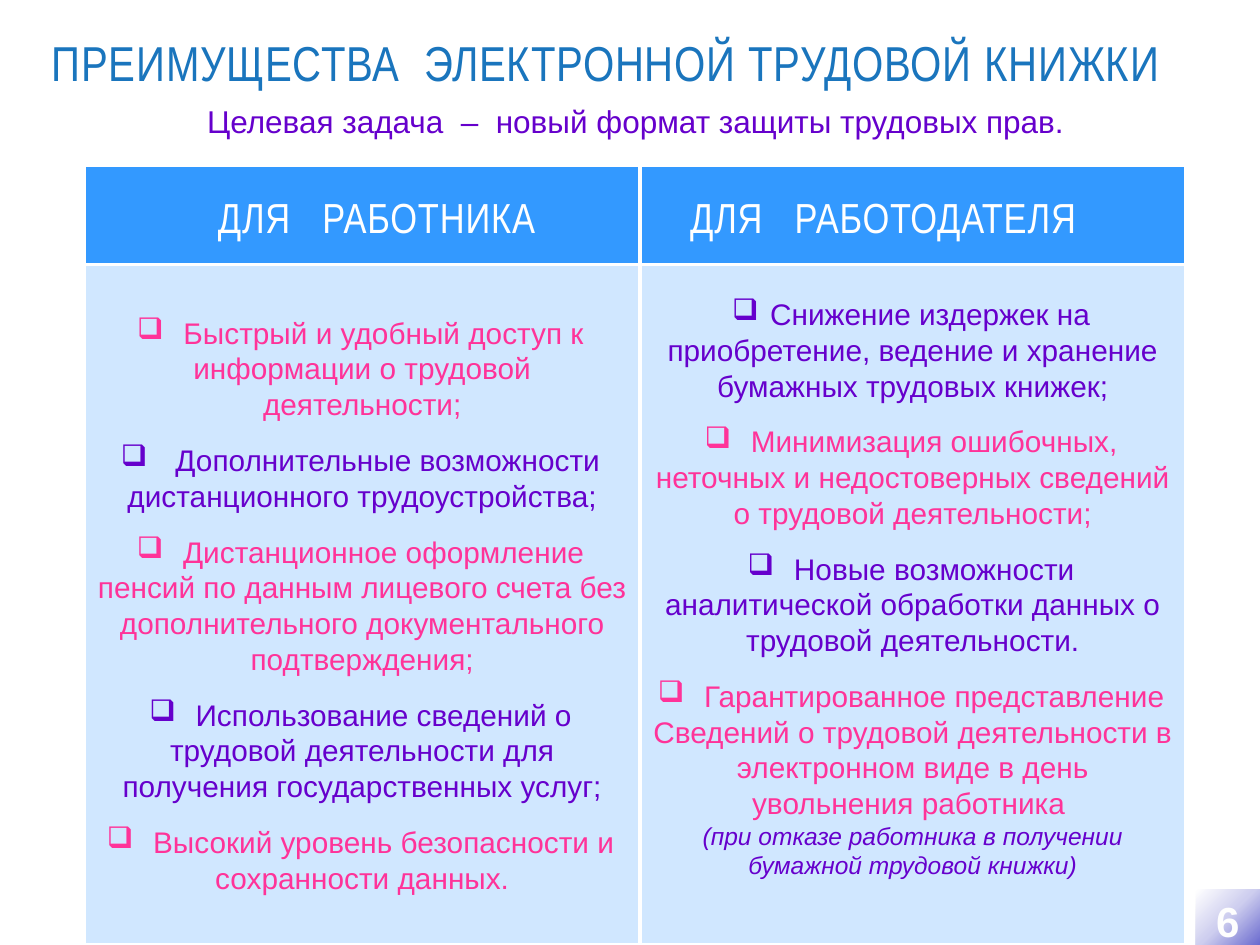
from lxml import etree
from pptx import Presentation
from pptx.dml.color import RGBColor
from pptx.enum.shapes import MSO_SHAPE as Shape
from pptx.enum.text import MSO_ANCHOR as Anchor, PP_ALIGN as Align
from pptx.oxml import parse_xml
from pptx.oxml.ns import nsdecls, qn
from pptx.util import Inches, Pt

WHITE = RGBColor(0xFF, 0xFF, 0xFF)
NEAR_WHITE = RGBColor(0xFE, 0xFE, 0xFE)
TITLE_BLUE = RGBColor(0x1A, 0x75, 0xBD)
HEADER_BLUE = RGBColor(0x33, 0x99, 0xFF)
PANEL_BLUE = RGBColor(0xB9, 0xDC, 0xFF)
PURPLE = RGBColor(0x66, 0x00, 0xCC)
PINK = RGBColor(0xFF, 0x33, 0x99)

HEADER_TOP, HEADER_HEIGHT = 1.31, 0.79
PANEL_TOP, PANEL_HEIGHT = HEADER_TOP + HEADER_HEIGHT, 5.4
ITEM_GAP = 11.5

WORKER_BENEFITS = [
    ("  Быстрый и удобный доступ к информации о трудовой деятельности;", PINK),
    ("   Дополнительные возможности дистанционного трудоустройства;", PURPLE),
    ("  Дистанционное оформление пенсий по данным лицевого счета без "
     "дополнительного документального подтверждения;", PINK),
    ("  Использование сведений о трудовой деятельности для получения "
     "государственных услуг;", PURPLE),
    ("  Высокий уровень безопасности и сохранности данных.", PINK),
]
EMPLOYER_BENEFITS = [
    (" Снижение издержек на приобретение, ведение и хранение бумажных "
     "трудовых книжек;", PURPLE),
    ("  Минимизация ошибочных, неточных и недостоверных сведений о трудовой "
     "деятельности;", PINK),
    ("  Новые возможности аналитической обработки данных о трудовой "
     "деятельности.", PURPLE),
    ("  Гарантированное представление Сведений о трудовой деятельности в "
     "электронном виде в день увольнения работника ", PINK),
]
REFUSAL_NOTE = "(при отказе работника в получении бумажной трудовой книжки)"


class SlideBuilder:
    """Holds the shared style and the slide being filled."""

    body_font = "Arial"
    heading_font = "Arial Narrow"
    body_size = 17

    def __init__(self, slide):
        self.slide = slide

    def run(self, paragraph, text, size, color, font=body_font, spacing=0):
        run = paragraph.add_run()
        run.text = text
        run.font.size = Pt(size)
        run.font.name = font
        run.font.color.rgb = color
        if spacing:
            run.font._element.set("spc", str(int(spacing * 100)))
        return run

    def label(self, box, text, size, color, font=body_font, spacing=0, align=Align.CENTER):
        frame = self.slide.shapes.add_textbox(*map(Inches, box)).text_frame
        frame.word_wrap = True
        frame.paragraphs[0].alignment = align
        self.run(frame.paragraphs[0], text, size, color, font, spacing)

    def heading(self, box, text, size, color, align=Align.CENTER):
        self.label(box, text, size, color, self.heading_font, 0.5, align)

    def rectangle(self, box, fill, alpha=None):
        rect = self.slide.shapes.add_shape(Shape.RECTANGLE, *map(Inches, box))
        rect.shadow.inherit = False
        rect.fill.solid()
        rect.fill.fore_color.rgb = fill
        rect.line.color.rgb = WHITE
        rect.line.width = Pt(2)
        if alpha:
            color = rect._element.spPr.find(qn("a:solidFill"))[0]
            etree.SubElement(color, qn("a:alpha")).set("val", str(alpha * 1000))
        return rect

    def benefits(self, box, items, note=None):
        frame = self.rectangle(box, PANEL_BLUE, alpha=66).text_frame
        frame.word_wrap = True
        frame.vertical_anchor = Anchor.MIDDLE
        for index, (text, color) in enumerate(items):
            item = frame.paragraphs[0] if index == 0 else frame.add_paragraph()
            item.alignment = Align.CENTER
            item.space_before = Pt(ITEM_GAP if index else 0)
            bullet = etree.SubElement(item._p.get_or_add_pPr(), qn("a:buChar"))
            bullet.set("char", "❑")
            self.run(item, text, self.body_size, color)
        if note:
            remark = frame.add_paragraph()
            remark.alignment = Align.CENTER
            self.run(remark, note, 14, PURPLE).font.italic = True
            frame.margin_bottom = Inches(0.32)

    def page_number(self, box, text):
        badge = self.rectangle(box, WHITE)
        badge.line.fill.background()
        # Radial gradient that starts in the bottom right corner
        stops = [(0, "6B6BCF"), (50, "CECEEF"), (100, "FFFFFF")]
        stop_xml = "".join(f'<a:gs pos="{pos * 1000}"><a:srgbClr val="{color}"/></a:gs>'
                           for pos, color in stops)
        gradient = parse_xml(
            f'<a:gradFill {nsdecls("a")}><a:gsLst>{stop_xml}</a:gsLst><a:path path="circle">'
            '<a:fillToRect l="100000" t="100000"/></a:path></a:gradFill>')
        properties = badge._element.spPr
        properties.replace(properties.find(qn("a:solidFill")), gradient)
        frame = badge.text_frame
        frame.vertical_anchor = Anchor.TOP
        frame.paragraphs[0].alignment = Align.CENTER
        digit = self.run(frame.paragraphs[0], text, 24, NEAR_WHITE, spacing=0.5)
        digit.font.bold = True
        digit.font._element.insert(0, parse_xml(
            f'<a:ln {nsdecls("a")} w="12700"><a:solidFill>'
            '<a:srgbClr val="202086"/></a:solidFill></a:ln>'))


def main():
    deck = Presentation()
    deck.slide_width, deck.slide_height = Inches(10), Inches(7.5)
    builder = SlideBuilder(deck.slides.add_slide(deck.slide_layouts[6]))

    # Title and subtitle
    builder.heading((0.31, 0.21, 9.69, 0.57), "ПРЕИМУЩЕСТВА  ЭЛЕКТРОННОЙ ТРУДОВОЙ КНИЖКИ",
                    28, TITLE_BLUE, Align.LEFT)
    builder.label((1.46, 0.76, 7.17, 0.4),
                  "Целевая задача  –  новый формат защиты трудовых прав.", 18, PURPLE)

    # Worker and employer columns
    columns = [
        (0.67, 4.41, 1.22, "ДЛЯ   РАБОТНИКА", WORKER_BENEFITS, None),
        (5.08, 4.33, 5.24, "ДЛЯ   РАБОТОДАТЕЛЯ", EMPLOYER_BENEFITS, REFUSAL_NOTE),
    ]
    for left, width, heading_left, heading, items, note in columns:
        builder.rectangle((left, HEADER_TOP, width, HEADER_HEIGHT), HEADER_BLUE)
        builder.heading((heading_left, 1.47, 3.54, 0.5), heading, 24, WHITE)
        builder.benefits((left, PANEL_TOP, width, PANEL_HEIGHT), items, note)

    # Page number
    builder.page_number((9.49, 7.06, 0.51, 0.44), "6")

    deck.save("out.pptx")


if __name__ == "__main__":
    main()
